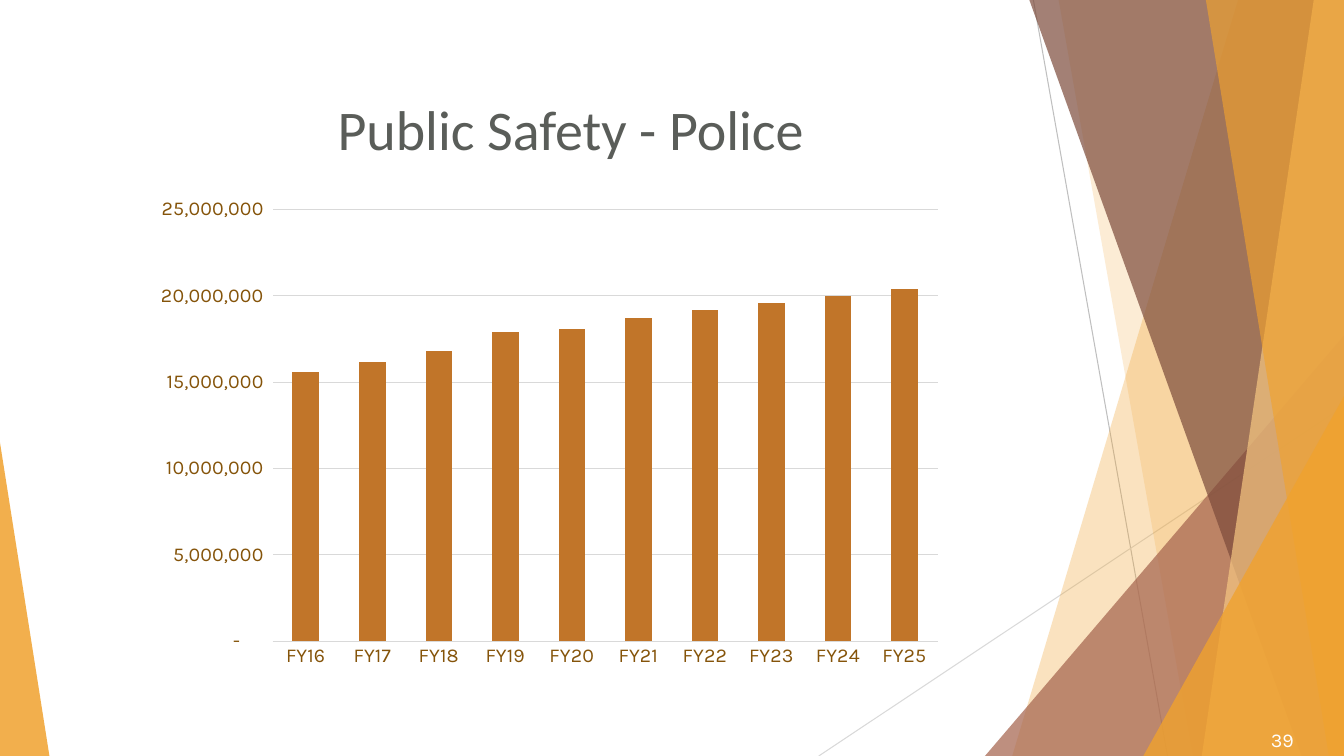
"""Build the police spending slide with its faceted border and column chart."""
from dataclasses import dataclass

import lxml.etree
import pptx
import pptx.chart.axis
import pptx.chart.chart
import pptx.chart.data
import pptx.dml.color
import pptx.dml.fill
import pptx.enum.chart
import pptx.enum.shapes
import pptx.enum.text
import pptx.oxml.ns
import pptx.slide
import pptx.util

WIDTH = pptx.util.Inches(13.33)
HEIGHT = pptx.util.Inches(7.5)


@dataclass(frozen=True)
class Theme:
    amber: str = "F0A22E"
    sand: str = "F6C782"
    clay: str = "A5644E"
    umber: str = "7C4B3B"
    column: str = "C17529"
    axis_text: str = "85540A"
    title_text: str = "5A5D59"
    number_text: str = "FFFFFF"
    thin_line: str = "BFBFBF"
    pale_line: str = "D9D9D9"
    title_font: str = "Calibri"
    body_font: str = "Karla"
    title_size: int = 40
    body_size: int = 14
    line_width: float = 0.75


@dataclass(frozen=True)
class Area:
    left: float
    top: float
    width: float
    height: float

    def lengths(self) -> tuple[int, int, int, int]:
        return across(self.left), down(self.top), across(self.width), down(self.height)


@dataclass(frozen=True)
class Ray:
    start: tuple[float, float]
    end: tuple[float, float]
    color: str


@dataclass(frozen=True)
class Facet:
    top_left: float
    bottom_left: float
    color: str
    opacity: int


@dataclass(frozen=True)
class Wedge:
    area: Area
    apex: float
    color: str
    opacity: int


@dataclass(frozen=True)
class Label:
    text: str
    area: Area
    font: str
    size: int
    color: str
    align: pptx.enum.text.PP_ALIGN
    anchor: pptx.enum.text.MSO_ANCHOR


THEME = Theme()
RAYS = [
    Ray((76.89, 0), (86.87, 100), THEME.thin_line),
    Ray((100, 53.73), (60.92, 100), THEME.pale_line),
]
BORDER = [
    Facet(92.12, 75.32, THEME.amber, 30),
    Facet(78.77, 88.75, THEME.amber, 20),
    Wedge(Area(73.29, 44.4, 26.71, 55.6), 1, THEME.clay, 72),
    Facet(76.59, 96.85, THEME.umber, 70),
    Facet(97.75, 89.42, THEME.sand, 70),
    Facet(89.72, 98.87, THEME.amber, 65),
    Wedge(Area(85.07, 52.4, 14.93, 47.6), 1, THEME.amber, 80),
    Wedge(Area(0, 58.53, 3.68, 41.47), 0, THEME.amber, 85),
]
LABELS = [
    Label("Public Safety - Police", Area(24.38, 5.33, 61.52, 16.67),
          THEME.title_font, THEME.title_size, THEME.title_text,
          pptx.enum.text.PP_ALIGN.LEFT, pptx.enum.text.MSO_ANCHOR.BOTTOM),
    Label("39", Area(90.25, 95.6, 6.75, 4.4),
          THEME.body_font, THEME.body_size, THEME.number_text,
          pptx.enum.text.PP_ALIGN.RIGHT, pptx.enum.text.MSO_ANCHOR.MIDDLE),
]
CHART_AREA = Area(8.33, 25.2, 62.57, 68.53)
PLOT_LAYOUT = {"layoutTarget": "inner", "xMode": "edge", "yMode": "edge",
               "x": 0.191, "y": 0.037, "w": 0.791, "h": 0.833}
YEARS = [f"FY{year}" for year in range(16, 26)]
MILLIONS = [15.6, 16.2, 16.8, 17.9, 18.1, 18.7, 19.2, 19.6, 20, 20.4]
NUMBER_FORMAT = r'_(* #,##0_);_(* \(#,##0\);_(* "-"??_);_(@_)'


def across(share: float) -> int:
    return round(WIDTH * share / 100)


def down(share: float) -> int:
    return round(HEIGHT * share / 100)


def rgb(color: str) -> pptx.dml.color.RGBColor:
    return pptx.dml.color.RGBColor.from_string(color)


def paint(fill: pptx.dml.fill.FillFormat, color: str) -> None:
    fill.solid()
    fill.fore_color.rgb = rgb(color)


def draw_ray(page: pptx.slide.Slide, ray: Ray) -> None:
    (left, top), (right, bottom) = ray.start, ray.end
    line = page.shapes.add_connector(pptx.enum.shapes.MSO_CONNECTOR.STRAIGHT,
                                     across(left), down(top), across(right), down(bottom))
    line.line.color.rgb = rgb(ray.color)
    line.line.width = pptx.util.Pt(THEME.line_width)
    lxml.etree.SubElement(line._element.spPr, pptx.oxml.ns.qn("a:effectLst"))


def draw_border(page: pptx.slide.Slide, piece: Facet | Wedge) -> None:
    if isinstance(piece, Facet):
        outline = page.shapes.build_freeform(across(piece.top_left), 0)
        outline.add_line_segments([(WIDTH, 0), (WIDTH, HEIGHT),
                                   (across(piece.bottom_left), HEIGHT)])
        shape = outline.convert_to_shape()
    else:
        shape = page.shapes.add_shape(pptx.enum.shapes.MSO_SHAPE.ISOSCELES_TRIANGLE,
                                      *piece.area.lengths())
        shape.adjustments[0] = piece.apex
    shape.shadow.inherit = False
    shape.line.fill.background()
    paint(shape.fill, piece.color)
    color = shape._element.spPr.find(".//" + pptx.oxml.ns.qn("a:srgbClr"))
    lxml.etree.SubElement(color, pptx.oxml.ns.qn("a:alpha"), val=str(piece.opacity * 1000))


def draw_label(page: pptx.slide.Slide, label: Label) -> None:
    frame = page.shapes.add_textbox(*label.area.lengths()).text_frame
    frame.word_wrap = True
    frame.vertical_anchor = label.anchor
    frame.text = label.text
    para = frame.paragraphs[0]
    para.alignment = label.align
    span = para.runs[0]
    span.font.name = label.font
    span.font.size = pptx.util.Pt(label.size)
    span.font.color.rgb = rgb(label.color)


def place_plot(chart: pptx.chart.chart.Chart) -> None:
    qn = pptx.oxml.ns.qn
    plot_area = chart._chartSpace.chart.plotArea
    for layout in plot_area.findall(qn("c:layout")):
        plot_area.remove(layout)
    layout = lxml.etree.Element(qn("c:layout"))
    manual = lxml.etree.SubElement(layout, qn("c:manualLayout"))
    for name, value in PLOT_LAYOUT.items():
        lxml.etree.SubElement(manual, qn(f"c:{name}"), val=str(value))
    plot_area.insert(0, layout)


def draw_chart(page: pptx.slide.Slide) -> None:
    data = pptx.chart.data.CategoryChartData()
    data.categories = YEARS
    data.add_series("Series 1", [round(value * 1_000_000) for value in MILLIONS])
    chart = page.shapes.add_chart(pptx.enum.chart.XL_CHART_TYPE.COLUMN_CLUSTERED,
                                  *CHART_AREA.lengths(), data).chart
    chart.has_legend = chart.has_title = False
    chart.font.name = THEME.body_font
    chart.font.size = pptx.util.Pt(THEME.body_size)
    chart.font.color.rgb = rgb(THEME.axis_text)
    plot = chart.plots[0]
    plot.gap_width = 150
    plot.vary_by_categories = False
    paint(plot.series[0].format.fill, THEME.column)
    values, years = chart.value_axis, chart.category_axis
    for axis in (values, years):
        axis.major_tick_mark = axis.minor_tick_mark = pptx.enum.chart.XL_TICK_MARK.NONE
    values.format.line.fill.background()
    values.minimum_scale, values.maximum_scale = 0, 25_000_000
    values.major_unit = 5_000_000
    values.tick_labels.number_format = NUMBER_FORMAT
    values.tick_labels.number_format_is_linked = False
    for line in (values.major_gridlines.format.line, years.format.line):
        line.color.rgb = rgb(THEME.pale_line)
        line.width = pptx.util.Pt(THEME.line_width)
    place_plot(chart)


def main() -> None:
    deck = pptx.Presentation()
    deck.slide_width, deck.slide_height = WIDTH, HEIGHT
    page = deck.slides.add_slide(deck.slide_layouts[6])
    for ray in RAYS:
        draw_ray(page, ray)
    for piece in BORDER:
        draw_border(page, piece)
    for label in LABELS:
        draw_label(page, label)
    draw_chart(page)
    deck.save("out.pptx")


if __name__ == "__main__":
    main()
